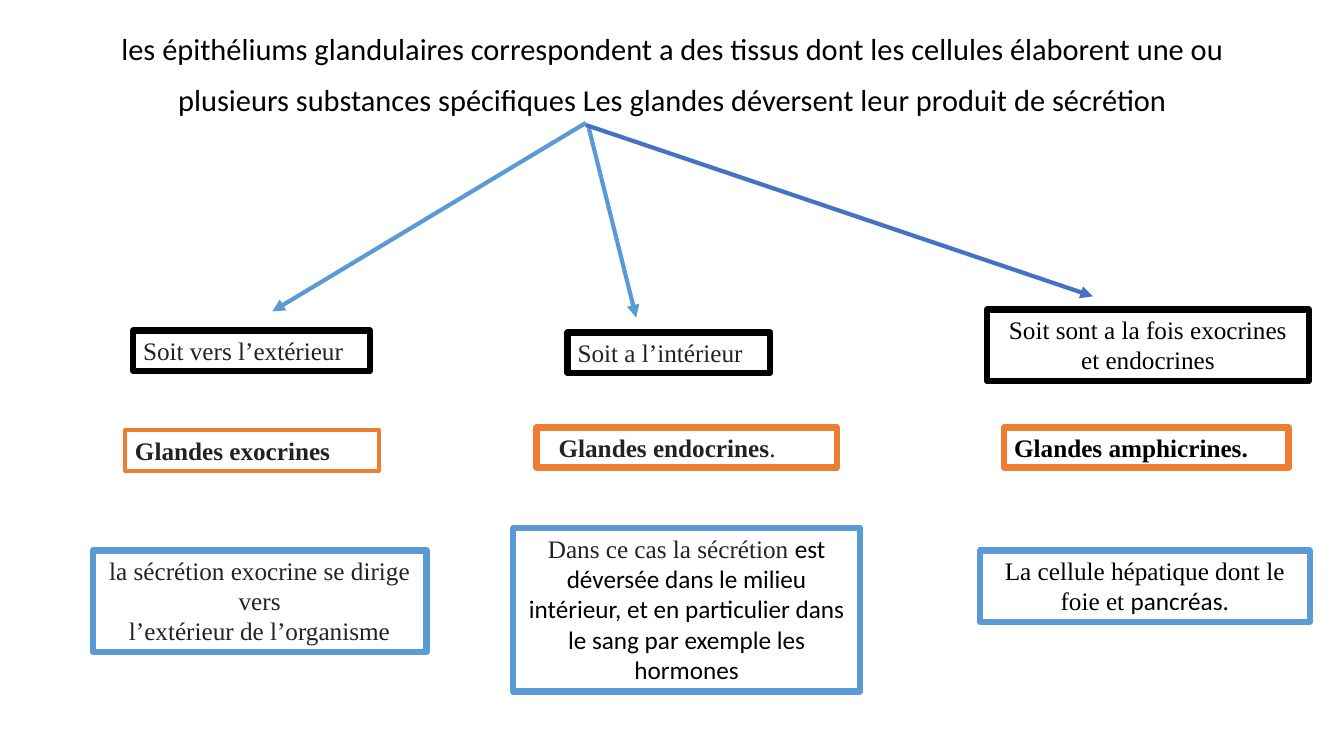
from dataclasses import dataclass

from lxml import etree
from pptx import Presentation
from pptx import util as u
from pptx.dml.color import RGBColor
from pptx.enum import shapes, text
from pptx.oxml.ns import qn

PX = 9144  # EMU per px, 100 px to the inch


@dataclass(frozen=True)
class Theme:
    black: str = "000000"
    ink: str = "222222"
    white: str = "FFFFFF"
    orange: str = "ED7D31"
    sky: str = "5B9BD5"
    blue: str = "4472C4"
    sans: str = "Calibri"
    serif: str = "Times New Roman"
    heading: float = 21.7
    body: float = 18
    thick: float = 4.5
    thin: float = 3


THEME = Theme()
CENTER = text.PP_ALIGN.CENTER
LEFT = text.PP_ALIGN.LEFT


def px(*lengths):
    return [u.Emu(length * PX) for length in lengths]


def rgb(value):
    return RGBColor.from_string(value)


def write(para, words, *, font=THEME.serif, size=THEME.body, color=THEME.ink, bold=False):
    span = para.add_run()
    span.text = words
    span.font.name = font
    span.font.size = u.Pt(size)
    span.font.color.rgb = rgb(color)
    span.font.bold = bold


def heading(slide, area, words):
    box = slide.shapes.add_textbox(*px(*area))
    box.text_frame.word_wrap = True
    para = box.text_frame.paragraphs[0]
    para.alignment = CENTER
    para.line_spacing = 1.4
    write(para, words, font=THEME.sans, size=THEME.heading, color=THEME.black)


def framed_box(slide, area, border, paragraphs, *, width=THEME.thick, align=CENTER, inset=10):
    """Each paragraph is a list of (words, format) pairs."""
    box = slide.shapes.add_shape(shapes.MSO_SHAPE.RECTANGLE, *px(*area))
    box.shadow.inherit = False
    box.fill.solid()
    box.fill.fore_color.rgb = rgb(THEME.white)
    box.line.color.rgb = rgb(border)
    box.line.width = u.Pt(width)
    frame = box.text_frame
    frame.word_wrap = True
    frame.vertical_anchor = text.MSO_ANCHOR.TOP
    frame.margin_left = px(inset)[0]
    for index, spans in enumerate(paragraphs):
        para = frame.add_paragraph() if index else frame.paragraphs[0]
        para.alignment = align
        for words, style in spans:
            write(para, words, **style)


def arrow(slide, start, end, color):
    line = slide.shapes.add_connector(shapes.MSO_CONNECTOR.STRAIGHT, *px(*start, *end))
    line.line.color.rgb = rgb(color)
    line.line.width = u.Pt(THEME.thin)
    etree.SubElement(line.line._get_or_add_ln(), qn("a:tailEnd"), type="triangle")
    etree.SubElement(line._element.spPr, qn("a:effectLst"))


def gland_column(slide, direction, gland, detail):
    """Stack of three boxes: direction, gland name, explanation."""
    for border, (area, paragraphs, options) in zip(
        (THEME.black, THEME.orange, THEME.sky), (direction, gland, detail)
    ):
        framed_box(slide, area, border, paragraphs, **options)


def glands_slide(deck):
    slide = deck.slides.add_slide(deck.slide_layouts[6])
    ink, bold = {}, {"bold": True}
    black = {"color": THEME.black}
    sans = {"color": THEME.black, "font": THEME.sans}
    left = {"align": LEFT}

    heading(slide, (92, 10, 1150, 135),
            "les épithéliums glandulaires correspondent a des tissus dont les cellules "
            "élaborent une ou plusieurs substances spécifiques Les glandes déversent "
            "leur produit de sécrétion")

    # Exocrine glands
    gland_column(
        slide,
        ((132, 328, 235, 40), [[("Soit vers l’extérieur", ink)]], left),
        ((124, 427, 252, 40), [[("Glandes exocrines", bold)]],
         {"align": LEFT, "width": THEME.thin}),
        ((92, 546, 331, 101), [[("la sécrétion exocrine se dirige vers", ink)],
                               [("l’extérieur de l’organisme", ink)]], {}),
    )

    # Endocrine glands
    gland_column(
        slide,
        ((563, 330, 201, 40), [[("Soit a l’intérieur", ink)]], left),
        ((532, 424, 298, 40), [[("Glandes endocrines", bold), (".", ink)]],
         {"align": LEFT, "inset": 22}),
        ((509, 524, 344, 162),
         [[("Dans ce cas la sécrétion ", ink), ("est", sans)],
          [("déversée dans le milieu intérieur, et en particulier dans "
            "le sang par exemple les hormones", sans)]], {}),
    )

    # Amphicrine glands
    gland_column(
        slide,
        ((979, 307, 319, 71), [[("Soit sont a la fois exocrines et endocrines", black)]], {}),
        ((996, 424, 282, 40), [[("Glandes amphicrines.", black | bold)]], left),
        ((972, 546, 327, 71),
         [[("La cellule hépatique dont le foie et ", black), ("pancréas.", sans)]], {}),
    )

    # Arrows from the heading to each column
    arrow(slide, (581, 122), (270, 309), THEME.sky)
    arrow(slide, (584, 127), (631, 315), THEME.sky)
    arrow(slide, (581, 124), (1084, 294), THEME.blue)


def main():
    deck = Presentation()
    deck.slide_width, deck.slide_height = px(1333, 750)
    glands_slide(deck)
    deck.save("out.pptx")


if __name__ == "__main__":
    main()
